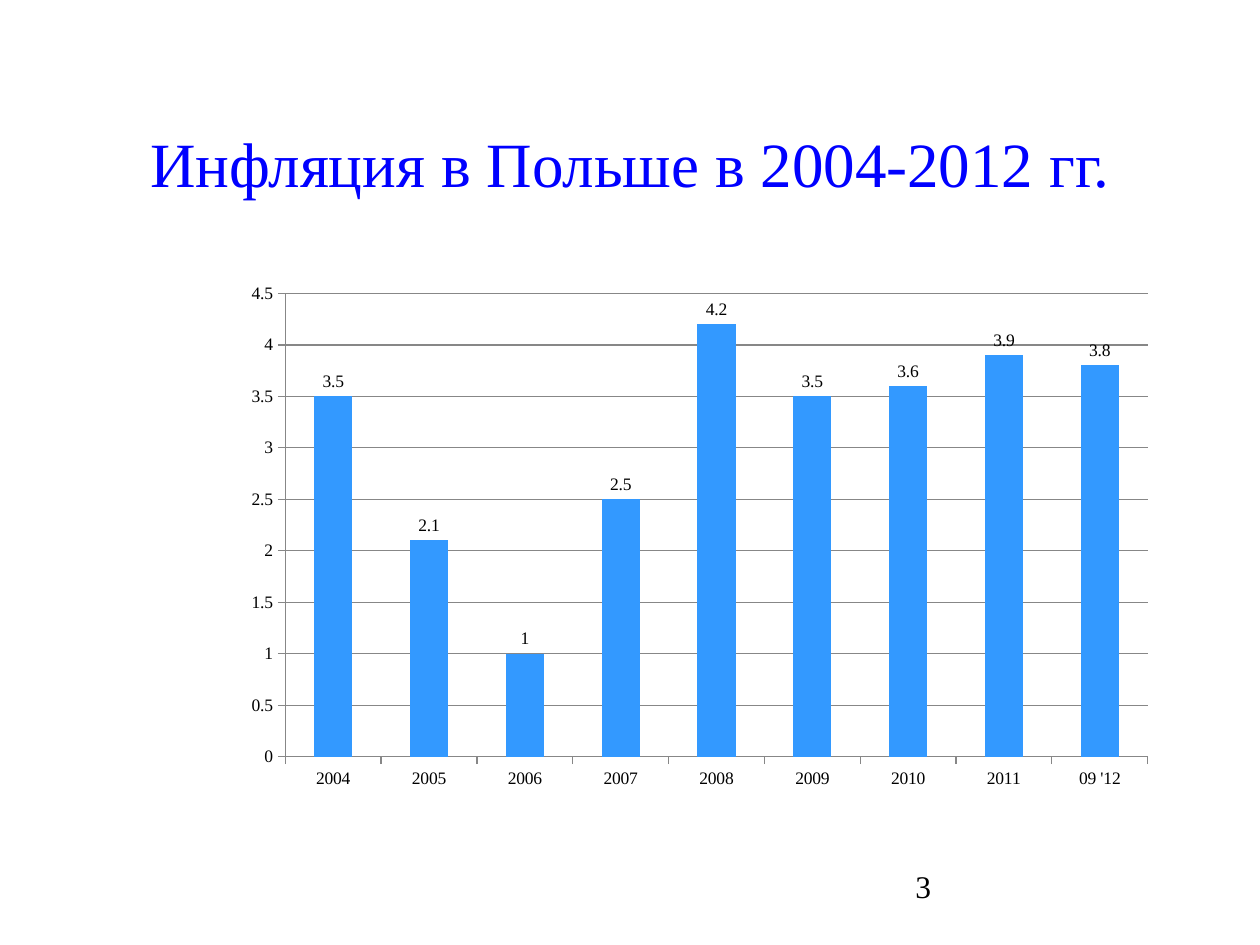
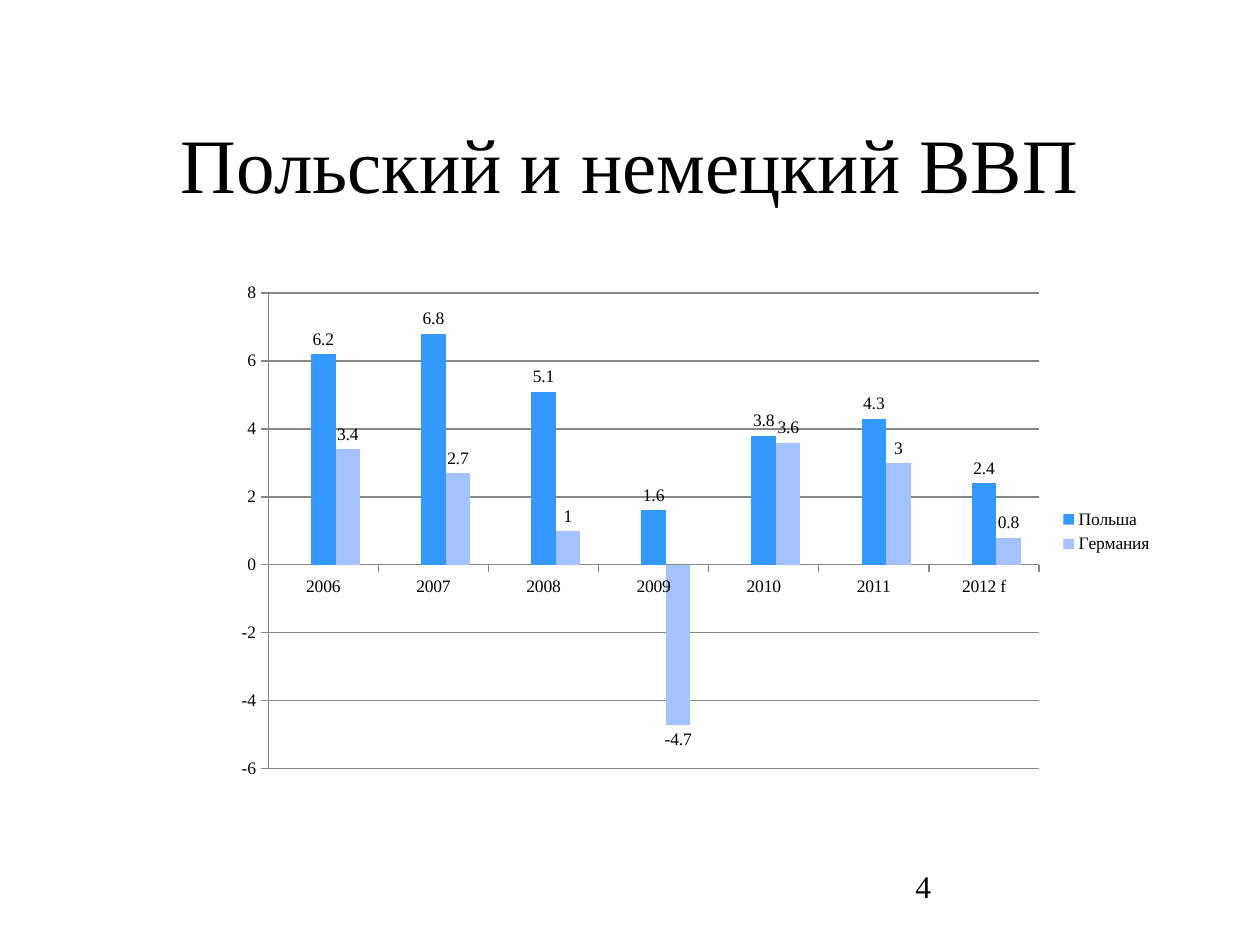
from lxml import etree
from pptx import Presentation
from pptx.chart.data import CategoryChartData as Data
from pptx.dml.color import RGBColor
from pptx.enum.chart import XL_CHART_TYPE as Kind, XL_LABEL_POSITION as Spot
from pptx.enum.chart import XL_LEGEND_POSITION as Side, XL_TICK_MARK as Tick
from pptx.enum.text import MSO_ANCHOR as Anchor, PP_ALIGN as Align
from pptx.oxml.ns import qn
from pptx.util import Pt

FACE = "Times New Roman"
BLACK, BLUE, GREY = "000000", "0000FF", "878787"
AZURE, PALE = "3399FF", "A3C2FF"


def color(code):
    return RGBColor.from_string(code)


def apply(item, **form):
    for key, value in form.items():
        setattr(item, key, value)


def node(parent, tag, val=None):
    child = etree.SubElement(parent, qn("c:" + tag))
    if val is not None:
        child.set("val", str(val))
    return child


class Deck:
    def __init__(self):
        self.prs = Presentation()
        apply(self.prs, slide_width=Pt(720), slide_height=Pt(540))
        self.slide = None

    def page(self, title, size, ink, number):
        self.slide = self.prs.slides.add_slide(self.prs.slide_layouts[6])
        self.text(title, (54, 48, 612, 90), size, ink, Align.CENTER, Anchor.MIDDLE)
        self.text(str(number), (516, 492, 150, 36), 18)

    def text(self, words, box, size, ink=BLACK, align=Align.LEFT, anchor=Anchor.TOP):
        frame = self.slide.shapes.add_textbox(*map(Pt, box)).text_frame
        apply(frame, word_wrap=True, vertical_anchor=anchor)
        para = frame.paragraphs[0]
        para.alignment = align
        run = para.add_run()
        run.text = words
        self.font(run.font, size, ink)

    def font(self, font, size, ink=BLACK):
        apply(font, name=FACE, size=Pt(size), bold=False)
        font.color.rgb = color(ink)

    def line(self, line):
        line.color.rgb = color(GREY)
        line.width = Pt(0.75)

    def columns(self, box, cats, rows, scale, plot, hide=None):
        """Rows hold name, values and fill; scale is low, high and step."""
        data = Data(number_format="General")
        data.categories = cats
        for name, values, _ in rows:
            data.add_series(name, values)
        chart = self.slide.shapes.add_chart(
            Kind.COLUMN_CLUSTERED, *map(Pt, box), data).chart
        apply(chart, has_title=False, has_legend=hide is not None)
        self.font(chart.font, 10)

        # Axes and grid
        low, high, step = scale
        apply(chart.value_axis, minimum_scale=low, maximum_scale=high,
              major_unit=step, has_major_gridlines=True)
        self.line(chart.value_axis.major_gridlines.format.line)
        for axis in (chart.category_axis, chart.value_axis):
            axis.major_tick_mark = Tick.OUTSIDE
            self.line(axis.format.line)

        # Bars and their values
        bars = chart.plots[0]
        apply(bars, gap_width=150, overlap=0, vary_by_categories=False)
        for series, (_, values, fill) in zip(bars.series, rows):
            series.invert_if_negative = False
            series.format.fill.solid()
            series.format.fill.fore_color.rgb = color(fill)
            if any(values):
                labels = series.data_labels
                apply(labels, show_value=True, position=Spot.OUTSIDE_END)
                self.font(labels.font, 10)

        # Legend without the spacer entry
        if hide is not None:
            apply(chart.legend, position=Side.RIGHT, include_in_layout=False)
            self.font(chart.legend.font, 10)
            entry = etree.Element(qn("c:legendEntry"))
            node(entry, "idx", hide)
            node(entry, "delete", 1)
            chart.legend._element.insert(1, entry)
        self.inner(chart, plot)

    def inner(self, chart, plot):
        """Place the inner plot area as shares of the chart frame."""
        area = chart._chartSpace.chart.plotArea
        for old in area.findall(qn("c:layout")):
            area.remove(old)
        layout = etree.Element(qn("c:layout"))
        area.insert(0, layout)
        manual = node(layout, "manualLayout")
        node(manual, "layoutTarget", "inner")
        for key in "xy":
            node(manual, key + "Mode", "edge")
        for key, share in zip("xywh", plot):
            node(manual, key, share)


def main():
    deck = Deck()

    # Inflation
    deck.page("Инфляция в Польше в 2004-2012 гг.", 36, BLUE, 3)
    years = [str(year) for year in range(2004, 2012)] + ["09 '12"]
    rates = (3.5, 2.1, 1, 2.5, 4.2, 3.5, 3.6, 3.9, 3.8)
    deck.columns((133.2, 156.24, 532.8, 300.96), years,
                 [("Series 1", rates, AZURE)],
                 (0, 4.5, 0.5), (0.056, 0.038, 0.925, 0.88))

    # Output of both countries; the empty series keeps the bars off centre
    deck.page("Польский и немецкий ВВП", 44, BLACK, 4)
    years = [str(year) for year in range(2006, 2012)] + ["2012 f"]
    rows = [
        ("Series 1", [None] * len(years), AZURE),
        ("Польша", (6.2, 6.8, 5.1, 1.6, 3.8, 4.3, 2.4), AZURE),
        ("Германия", (3.4, 2.7, 1, -4.7, 3.6, 3, 0.8), PALE),
    ]
    deck.columns((127.44, 156.24, 538.56, 295.2), years, rows,
                 (-6, 8, 2), (0.048, 0.038, 0.818, 0.921), hide=0)

    deck.prs.save("out.pptx")


if __name__ == "__main__":
    main()
